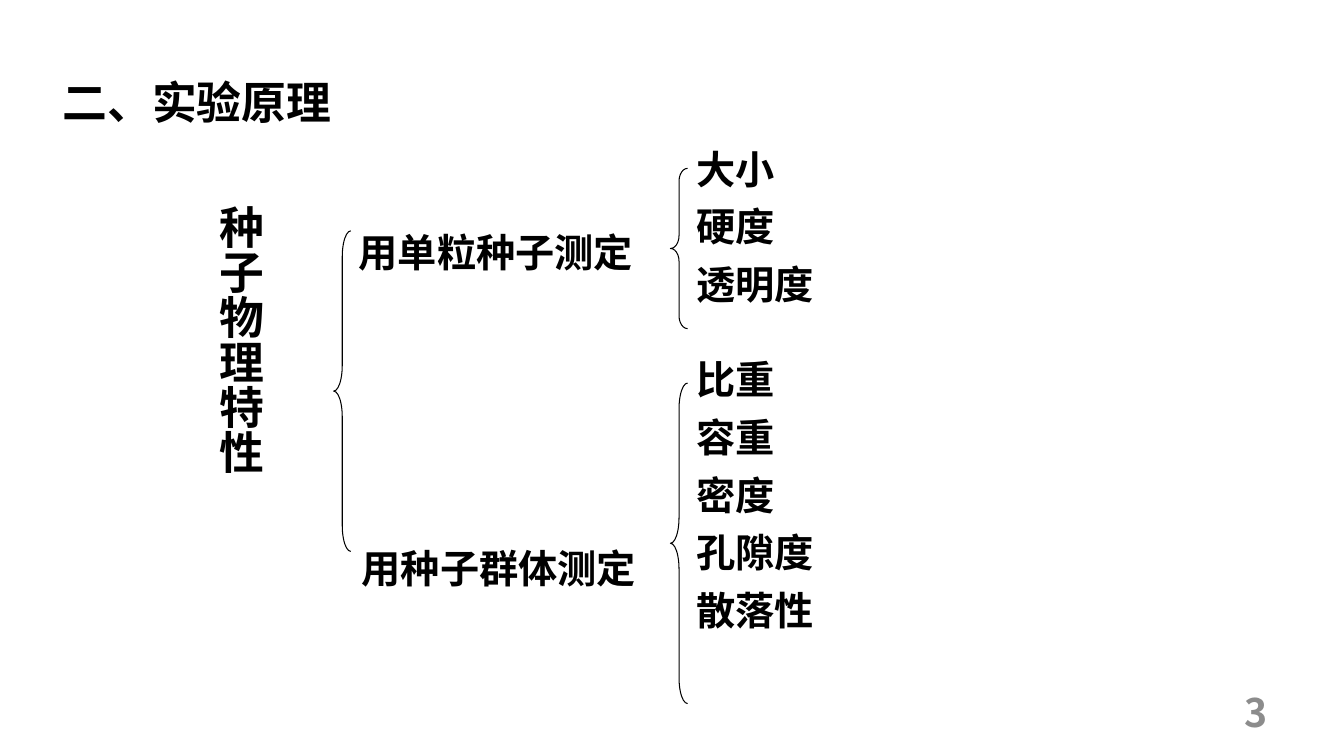
from dataclasses import dataclass

from pptx import Presentation
from pptx.dml.color import RGBColor
from pptx.enum.shapes import MSO_SHAPE
from pptx.enum.text import MSO_ANCHOR, MSO_AUTO_SIZE, PP_ALIGN
from pptx.util import Inches, Pt

LEFT, CENTER, RIGHT = PP_ALIGN.LEFT, PP_ALIGN.CENTER, PP_ALIGN.RIGHT
TOP, MIDDLE = MSO_ANCHOR.TOP, MSO_ANCHOR.MIDDLE
GROW, FIXED = MSO_AUTO_SIZE.SHAPE_TO_FIT_TEXT, MSO_AUTO_SIZE.NONE
LEFT_BRACE = MSO_SHAPE.LEFT_BRACE
FONT = "Noto Sans CJK SC"
BLACK, GRAY = "000000", "8C8C8C"
BRACE_WIDTH = 0.17


@dataclass
class Label:
    lines: list[str]
    left: float
    top: float
    width: float
    height: float
    size: float = 28
    spacing: float = 1.5
    before: float = 0
    align: PP_ALIGN = CENTER
    anchor: MSO_ANCHOR = TOP
    color: str = BLACK
    margin_x: float = 0.1
    margin_y: float = 0.05
    wrap: bool = True
    vertical: bool = False
    grow: bool = True
    tail_size: float = 0


@dataclass
class Brace:
    left: float
    top: float
    height: float
    curve: float


LABELS = [
    Label(["3"], 9.56, 6.95, 3.11, 0.4, spacing=0.5, align=RIGHT,
          anchor=MIDDLE, color=GRAY, grow=False),
    Label(["二、实验原理"], 0.49, 0.47, 9.04, 0.79, size=32, spacing=1.4,
          align=LEFT, margin_x=0.13, margin_y=0.06),
    Label(["用单粒种子测定"], 3.41, 1.98, 3.09, 0.57, wrap=False, tail_size=24),
    Label(["用种子群体测定"], 3.48, 5.12, 3.01, 0.81, tail_size=24),
    Label(["种子物理特性"], 2.24, 1.94, 0.73, 3.62, size=32, vertical=True),
    Label(["大小", "硬度", "透明度"], 6.81, 1.44, 3.42, 1.99,
          spacing=0.9, before=11, align=LEFT),
    Label(["比重", "容重", "密度", "孔隙度", "散落性"], 6.81, 3.53, 3.92, 3.37,
          spacing=0.9, before=11, align=LEFT),
]

BRACES = [
    Brace(3.31, 2.29, 3.18, 1.5),
    Brace(6.65, 1.67, 1.59, 0.75),
    Brace(6.65, 3.8, 3.18, 1.5),
]


def rgb(value: str) -> RGBColor:
    return RGBColor.from_string(value)


def add_label(slide, label: Label) -> None:
    shape = slide.shapes.add_textbox(Inches(label.left), Inches(label.top),
                                     Inches(label.width), Inches(label.height))
    frame = shape.text_frame
    frame.word_wrap = label.wrap
    frame.auto_size = GROW if label.grow else FIXED
    frame.vertical_anchor = label.anchor
    frame.margin_left = frame.margin_right = Inches(label.margin_x)
    frame.margin_top = frame.margin_bottom = Inches(label.margin_y)
    if label.vertical:
        frame._txBody.bodyPr.set("vert", "eaVert")
    for index, line in enumerate(label.lines):
        paragraph = frame.add_paragraph() if index else frame.paragraphs[0]
        paragraph.alignment = label.align
        paragraph.line_spacing = label.spacing
        paragraph.space_before = Pt(label.before)
        paragraph.font.name = FONT
        paragraph.font.size = Pt(label.size)
        paragraph.font.bold = True
        paragraph.font.color.rgb = rgb(label.color)
        paragraph.add_run().text = line
        if label.tail_size:
            tail = paragraph.add_run()
            tail.text = " "
            tail.font.size = Pt(label.tail_size)


def add_brace(slide, brace: Brace) -> None:
    shape = slide.shapes.add_shape(LEFT_BRACE, Inches(brace.left), Inches(brace.top),
                                   Inches(BRACE_WIDTH), Inches(brace.height))
    shape.adjustments[0] = brace.curve
    shape.adjustments[1] = 0.5
    shape.shadow.inherit = False
    shape.fill.background()
    shape.line.color.rgb = rgb(BLACK)
    shape.line.width = Pt(0.75)


def main() -> None:
    presentation = Presentation()
    presentation.slide_width = Inches(13.33)
    presentation.slide_height = Inches(7.5)
    slide = presentation.slides.add_slide(presentation.slide_layouts[6])
    for label in LABELS:
        add_label(slide, label)
    for brace in BRACES:
        add_brace(slide, brace)
    presentation.save("out.pptx")


if __name__ == "__main__":
    main()
